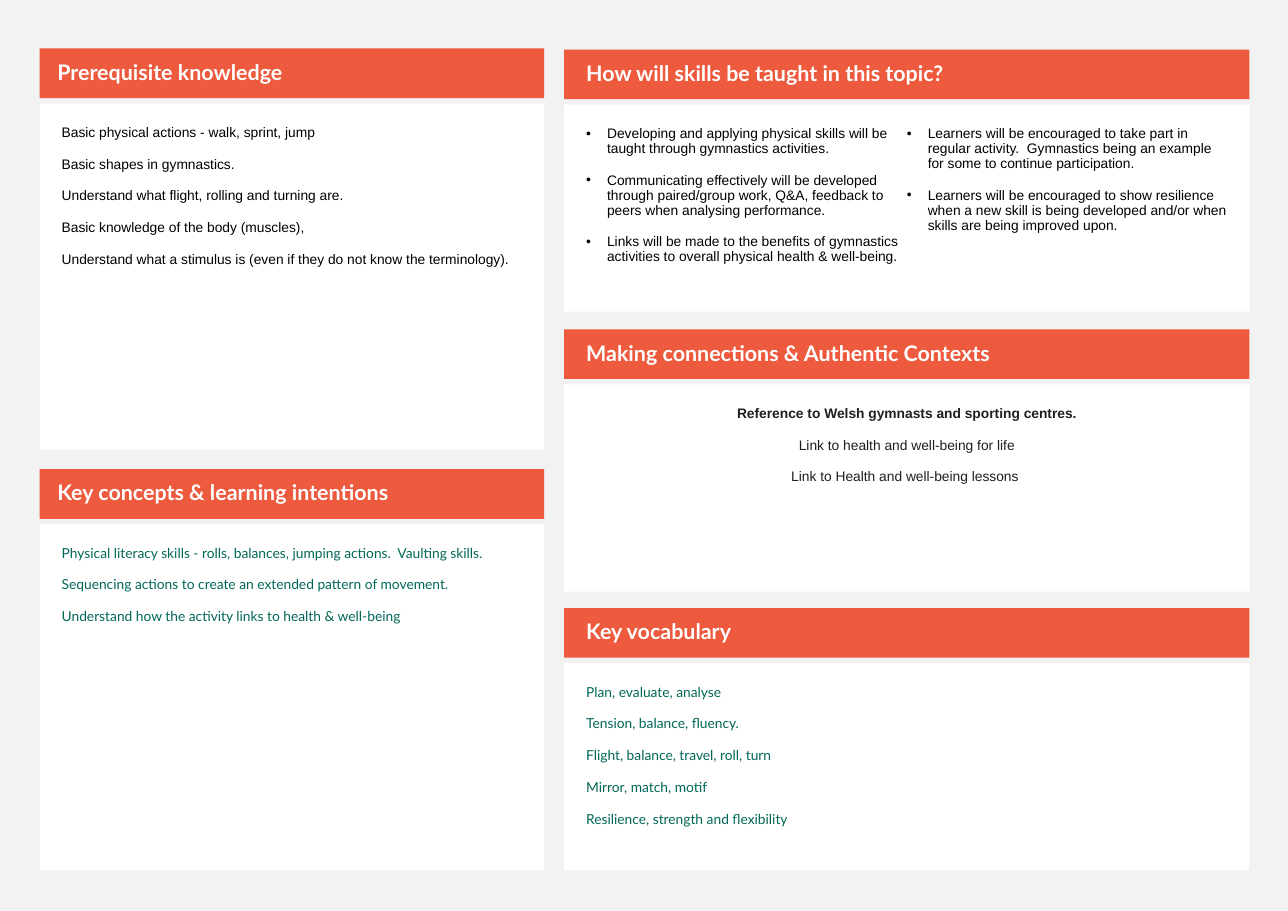
from dataclasses import dataclass

from lxml.etree import SubElement
from pptx import Presentation
from pptx.dml.color import RGBColor
from pptx.enum.shapes import MSO_SHAPE as SHAPE
from pptx.enum.text import MSO_ANCHOR as ANCHOR, PP_ALIGN as ALIGN
from pptx.oxml.ns import qn
from pptx.util import Inches, Pt

HEADER_H = 0.45
BODY_OFFSET = 0.5
BULLET_INDENT = 0.19
ORANGE, WHITE, GREY = "ED5A3E", "FFFFFF", "F2F2F2"
GREEN, BLACK, CHARCOAL = "006758", "000000", "1F1F1F"


@dataclass
class Column:
    left: float
    width: float
    body_h: float
    header_inset: float


@dataclass
class Panel:
    column: Column
    top: float
    title: str
    lines: list[str]
    font: str = "Lato"
    color: str = GREEN
    align: ALIGN = ALIGN.LEFT
    text_columns: int = 1
    bulleted: bool = False
    lead_bold: bool = False


LEFT = Column(0.36, 4.58, 3.14, 0.16)
RIGHT = Column(5.12, 6.22, 1.88, 0.2)

# Panel contents; no-break spaces hold some words together
PANELS = [
    Panel(LEFT, 0.44, "Prerequisite knowledge", [
        "Basic physical actions - walk, sprint, jump",
        "Basic shapes in gymnastics.",
        "Understand what flight, rolling and turning are.",
        "Basic knowledge of the body (muscles), ",
        "Understand what a stimulus is (even if they do not know the terminology).",
    ], font="Arial", color=BLACK),
    Panel(LEFT, 4.26, "Key concepts & learning intentions", [
        "Physical literacy skills - rolls, balances, jumping actions.  Vaulting skills.",
        "Sequencing actions to create an extended pattern of movement.",
        "Understand how the activity links to health & well-being",
    ]),
    Panel(RIGHT, 0.45, "How will skills be taught in this topic?", [
        "Developing and applying physical skills will be taught through "
        "gymnastics activities. ",
        "Communicating effectively will be developed through paired/group work, "
        "Q&A, feedback to peers when analysing performance.",
        "Links will be made to the benefits of gymnastics activities to overall "
        "physical health & well-being.",
        "Learners will be encouraged to take part in regular activity.  "
        "Gymnastics being an example for some to continue participation.",
        "Learners will be encouraged to show resilience when a new skill is being "
        "developed and/or when skills are being improved upon.",
    ], font="Arial", color=BLACK, text_columns=2, bulleted=True),
    Panel(RIGHT, 2.99, "Making connections & Authentic Contexts", [
        "Reference to Welsh gymnasts and sporting centres.",
        "Link to health and well-being for life",
        "Link to Health and well-being lessons ",
    ], font="Arial", color=CHARCOAL, align=ALIGN.CENTER, lead_bold=True),
    Panel(RIGHT, 5.52, "Key vocabulary", [
        "Plan, evaluate, analyse",
        "Tension, balance, fluency.",
        "Flight, balance, travel, roll, turn",
        "Mirror, match, motif",
        "Resilience, strength and flexibility",
    ]),
]


def rgb(value: str) -> RGBColor:
    return RGBColor.from_string(value)


def apply(target, formats: dict) -> None:
    for name, value in formats.items():
        setattr(target, name, value)


def add_box(slide, column: Column, top: float, height: float, fill: str,
            insets: tuple[float, ...], anchor: ANCHOR):
    """Draw a plain rectangle and return its text frame."""
    sp = slide.shapes.add_shape(SHAPE.RECTANGLE, Inches(column.left), Inches(top),
                                Inches(column.width), Inches(height))
    sp.shadow.inherit = False
    sp.fill.solid()
    sp.fill.fore_color.rgb = rgb(fill)
    sp.line.fill.background()
    tf = sp.text_frame
    sides = ("margin_left", "margin_top", "margin_right", "margin_bottom")
    apply(tf, dict(zip(sides, map(Inches, insets))))
    apply(tf, {"word_wrap": True, "vertical_anchor": anchor})
    return tf


def add_bullet(p) -> None:
    pPr = p._p.get_or_add_pPr()
    pPr.set("marL", str(Inches(BULLET_INDENT)))
    pPr.set("indent", str(-Inches(BULLET_INDENT)))
    SubElement(pPr, qn("a:buFont")).set("typeface", "Arial")
    SubElement(pPr, qn("a:buChar")).set("char", "•")


def write_line(tf, index: int, text: str, color: str, font: dict,
               align: ALIGN = ALIGN.LEFT, bulleted: bool = False) -> None:
    p = tf.add_paragraph() if index else tf.paragraphs[0]
    apply(p, {"alignment": align, "line_spacing": 0.9, "space_before": Pt(11)})
    if bulleted:
        add_bullet(p)
    r = p.add_run()
    r.text = text
    apply(r.font, font)
    r.font.color.rgb = rgb(color)


def add_panel(slide, panel: Panel) -> None:
    col = panel.column

    # Header bar
    tf = add_box(slide, col, panel.top, HEADER_H, ORANGE,
                 (col.header_inset, 0.05, 0.1, 0.05), ANCHOR.MIDDLE)
    write_line(tf, 0, panel.title, WHITE,
               {"name": "Lato", "size": Pt(14), "bold": True})

    # Body
    tf = add_box(slide, col, panel.top + BODY_OFFSET, col.body_h, WHITE,
                 (0.2,) * 4, ANCHOR.TOP)
    if panel.text_columns > 1:
        tf._txBody.bodyPr.set("numCol", str(panel.text_columns))
    for i, line in enumerate(panel.lines):
        font = {"name": panel.font, "size": Pt(9),
                "bold": panel.lead_bold and i == 0}
        write_line(tf, i, line, panel.color, font, panel.align, panel.bulleted)


def main() -> None:
    prs = Presentation()
    prs.slide_width, prs.slide_height = Inches(11.69), Inches(8.27)
    slide = prs.slides.add_slide(prs.slide_layouts[6])
    slide.background.fill.solid()
    slide.background.fill.fore_color.rgb = rgb(GREY)
    for panel in PANELS:
        add_panel(slide, panel)
    prs.save("out.pptx")


if __name__ == "__main__":
    main()
